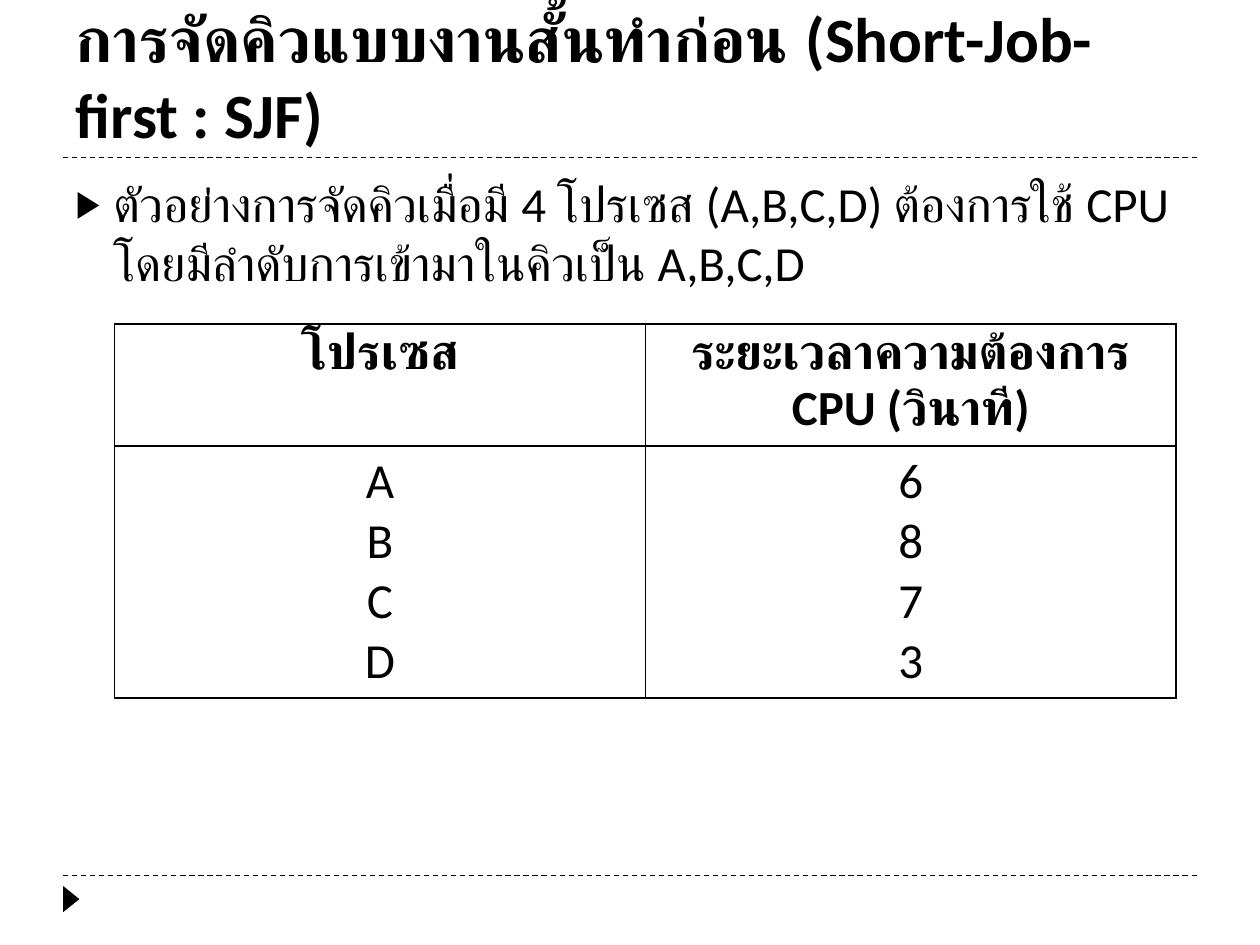
"""Build the Short-Job-first scheduling slide with its process table."""
from lxml.etree import SubElement
from pptx import Presentation
from pptx.dml.color import RGBColor
from pptx.enum.dml import MSO_LINE
from pptx.enum.shapes import MSO_CONNECTOR, MSO_SHAPE
from pptx.enum.text import MSO_ANCHOR as ANCHOR, MSO_AUTO_SIZE as FIT, PP_ALIGN as ALIGN
from pptx.oxml import parse_xml
from pptx.oxml.ns import nsdecls, qn
from pptx.util import Cm, Pt

TITLE = "การจัดคิวแบบงานสั้นทำก่อน (Short-Job-first : SJF)"
BODY = "ตัวอย่างการจัดคิวเมื่อมี 4 โปรเซส (A,B,C,D) ต้องการใช้ CPU โดยมีลำดับการเข้ามาในคิวเป็น A,B,C,D"
HEADERS = ["โปรเซส", "ระยะเวลาความต้องการ CPU (วินาที)"]
TIMES = {"A": 6, "B": 8, "C": 7, "D": 3}

BLACK = RGBColor(0, 0, 0)
WHITE = RGBColor(255, 255, 255)
TITLE_FONT = {"name": "Calibri", "size": Pt(36), "bold": True}
HEAD_FONT = {"name": "Calibri", "size": Pt(28), "bold": True}
TEXT_FONT = {"name": "Calibri", "size": Pt(28), "bold": False}

LEFT, WIDTH = 1.27, 22.86
RULES = [17.65, 3.18]
COL_WIDTH = 10.7
ROW_HEIGHTS = [2.46, 5.08]


def write(p, text, font):
    r = p.add_run()
    r.text = text
    for key, value in font.items():
        setattr(r.font, key, value)
    r.font.color.rgb = BLACK


def fill_placeholder(sp, box, text, font, anchor):
    sp.left, sp.top, sp.width, sp.height = map(Cm, box)
    tf = sp.text_frame
    for key, value in {"auto_size": FIT.NONE, "word_wrap": True, "vertical_anchor": anchor}.items():
        setattr(tf, key, value)
    p = tf.paragraphs[0]
    p.alignment = ALIGN.LEFT
    write(p, text, font)
    return p


def add_bullet(p):
    pPr = p._p.get_or_add_pPr()
    pPr.set("marL", str(Cm(0.76)))
    pPr.set("indent", str(-Cm(0.76)))
    color = SubElement(pPr, qn("a:buClr"))
    SubElement(color, qn("a:srgbClr"), val=str(BLACK))
    SubElement(pPr, qn("a:buSzPct"), val="76000")
    SubElement(pPr, qn("a:buFont"), typeface="Arial")
    SubElement(pPr, qn("a:buChar"), char="▶")


def add_rule(shapes, y):
    s = shapes.add_connector(MSO_CONNECTOR.STRAIGHT, Cm(LEFT), Cm(y), Cm(LEFT + WIDTH), Cm(y))
    s.line.color.rgb = BLACK
    s.line.width = Pt(0.75)
    s.line.dash_style = MSO_LINE.DASH
    SubElement(s._element.spPr, qn("a:effectLst"))


def fill_cell(cell, lines, font):
    tcPr = cell._tc.get_or_add_tcPr()
    for side in "LRTB":
        tcPr.append(parse_xml(
            f'<a:ln{side} {nsdecls("a")} w="{Pt(1)}"><a:solidFill>'
            f'<a:srgbClr val="{BLACK}"/></a:solidFill></a:ln{side}>'))
    cell.fill.solid()
    cell.fill.fore_color.rgb = WHITE
    tf = cell.text_frame
    for i, line in enumerate(lines):
        p = tf.add_paragraph() if i else tf.paragraphs[0]
        p.alignment = ALIGN.CENTER
        write(p, line, font)


def main():
    prs = Presentation()
    prs.slide_width, prs.slide_height = Cm(25.4), Cm(19.05)
    slide = prs.slides.add_slide(prs.slide_layouts[1])
    shapes = slide.shapes
    title, body = slide.placeholders

    for y in RULES:
        add_rule(shapes, y)
    s = shapes.add_shape(MSO_SHAPE.ISOSCELES_TRIANGLE, Cm(1.17), Cm(17.96), Cm(0.53), Cm(0.33))
    s.rotation = 90
    s.shadow.inherit = False
    s.fill.solid()
    s.fill.fore_color.rgb = BLACK
    s.line.fill.background()

    fill_placeholder(title, (LEFT, 0.43, WIDTH, 2.74), TITLE, TITLE_FONT, ANCHOR.BOTTOM)
    p = fill_placeholder(body, (LEFT, 3.38, WIDTH, 13.72), BODY, TEXT_FONT, ANCHOR.TOP)
    p.space_before = Pt(6)
    add_bullet(p)

    columns = list(zip(HEADERS, (list(TIMES), [str(t) for t in TIMES.values()])))
    table = shapes.add_table(len(ROW_HEIGHTS), len(columns), Cm(2.31), Cm(6.53),
                             Cm(COL_WIDTH * len(columns)), Cm(sum(ROW_HEIGHTS))).table
    for row, height in zip(table.rows, ROW_HEIGHTS):
        row.height = Cm(height)
    for i, (header, values) in enumerate(columns):
        table.columns[i].width = Cm(COL_WIDTH)
        fill_cell(table.cell(0, i), [header], HEAD_FONT)
        fill_cell(table.cell(1, i), values, TEXT_FONT)

    prs.save("out.pptx")


if __name__ == "__main__":
    main()
